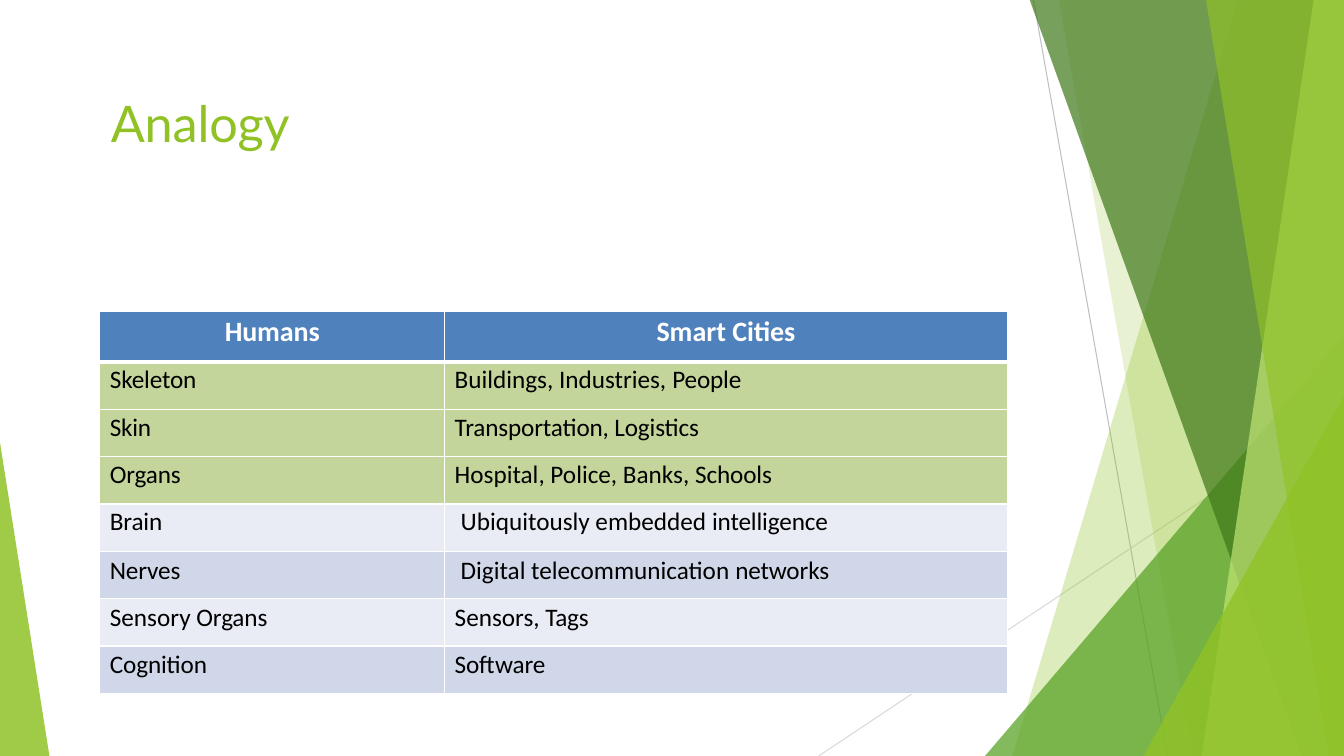
"""Build the Analogy slide: humans and smart cities side by side."""
from dataclasses import dataclass

from lxml.etree import SubElement
from pptx import Presentation
from pptx.dml.color import RGBColor
from pptx.enum.shapes import MSO_CONNECTOR, MSO_SHAPE
from pptx.enum.text import MSO_ANCHOR, PP_ALIGN
from pptx.oxml import parse_xml
from pptx.oxml.ns import nsdecls, qn
from pptx.util import Pt

SCALE = 9144
WIDE, HIGH = 1333, 750
WHITE = RGBColor(0xFF, 0xFF, 0xFF)
BLACK = RGBColor(0x00, 0x00, 0x00)
LIME = RGBColor(0x90, 0xC2, 0x26)
LEAF = RGBColor(0x54, 0xA0, 0x21)
PINE = RGBColor(0x3F, 0x78, 0x19)
PALE = RGBColor(0xC0, 0xE4, 0x74)
GREY = RGBColor(0xBF, 0xBF, 0xBF)
SILVER = RGBColor(0xD9, 0xD9, 0xD9)
BLUE = RGBColor(0x4F, 0x81, 0xBC)
OLIVE = RGBColor(0xC3, 0xD5, 0x9B)
MIST = RGBColor(0xE9, 0xEC, 0xF4)
HAZE = RGBColor(0xD0, 0xD7, 0xE8)


@dataclass
class Ray:
    """A thin line between two points."""
    start: tuple[int, int]
    end: tuple[int, int]
    color: RGBColor


@dataclass
class Band:
    """A slanted band that reaches the right edge."""
    top: int
    foot: int
    color: RGBColor
    alpha: int


@dataclass
class Wedge:
    """A triangle that stands on the bottom edge."""
    left: int
    top: int
    width: int
    tip: int
    color: RGBColor
    alpha: int


@dataclass
class Words:
    """The runs of one cell, with the spacing of the last run."""
    runs: list[str]
    space: int = -10
    indent: int = 10


@dataclass
class Row:
    """One table row."""
    human: Words
    city: Words
    color: RGBColor
    inset: int = 3


RAYS = [Ray((1025, 0), (1158, HIGH), GREY), Ray((WIDE, 403), (812, HIGH), SILVER)]
DECOR = [
    Band(1228, 1004, LIME, 30),
    Band(1050, 1183, LIME, 20),
    Wedge(977, 333, 356, 1, LEAF, 72),
    Band(1021, 1291, PINE, 70),
    Band(1303, 1192, PALE, 70),
    Band(1196, 1318, LIME, 65),
    Wedge(1134, 393, 199, 1, LIME, 80),
    Wedge(0, 439, 49, 0, LIME, 85),
]
ROWS = [
    Row(Words(["Humans"], indent=0), Words(["Smart ", "Cities"], indent=0), BLUE),
    Row(Words(["Skeleton"]), Words(["Buildings, Industries, ", "People"]), OLIVE),
    Row(Words(["Skin"], -20), Words(["Transportation, Logistics"]), OLIVE),
    Row(Words(["Organs"]), Words(["Hospital, Police, Banks, ", "Schools"]), OLIVE),
    Row(Words(["Brain"]), Words(["Ubiquitously embedded ", "intelligence"], indent=16), MIST),
    Row(Words(["Nerves"]), Words(["Digital telecommunication ", "networks"], indent=16), HAZE, 4),
    Row(Words(["Sensory ", "Organs"]), Words(["Sensors, ", "Tags"], -20), MIST, 4),
    Row(Words(["Cognition"]), Words(["Software"]), HAZE, 4),
]


def px(size: int) -> int:
    """Turn px into EMU."""
    return size * SCALE


def paint(shape, color: RGBColor, alpha: int) -> None:
    """Give a shape a clear fill with no line or shadow."""
    shape.shadow.inherit = False
    shape.line.fill.background()
    shape.fill.solid()
    shape.fill.fore_color.rgb = color
    tint = shape.fill._xPr.find(qn("a:solidFill"))[0]
    SubElement(tint, qn("a:alpha")).set("val", str(alpha * 1000))


def draw_ray(slide, ray: Ray) -> None:
    """Draw one thin line."""
    line = slide.shapes.add_connector(
        MSO_CONNECTOR.STRAIGHT, *map(px, ray.start + ray.end))
    line.line.color.rgb = ray.color
    line.line.width = Pt(0.75)
    SubElement(line._element.spPr, qn("a:effectLst"))


def draw_band(slide, band: Band) -> None:
    """Draw one slanted band."""
    form = slide.shapes.build_freeform(band.top, -1, SCALE)
    form.add_line_segments([(WIDE, -1), (WIDE, HIGH), (band.foot, HIGH)])
    paint(form.convert_to_shape(), band.color, band.alpha)


def draw_wedge(slide, wedge: Wedge) -> None:
    """Draw one triangle."""
    shape = slide.shapes.add_shape(
        MSO_SHAPE.ISOSCELES_TRIANGLE, px(wedge.left), px(wedge.top),
        px(wedge.width), px(HIGH - wedge.top))
    shape.adjustments[0] = wedge.tip
    paint(shape, wedge.color, wedge.alpha)


def write(part, words: Words, face: str, size: int, color: RGBColor,
          bold: bool, before: float) -> None:
    """Write the runs into the first paragraph."""
    part.space_before = Pt(before)
    part._p.get_or_add_pPr().set("marL", str(px(words.indent)))
    for text in words.runs:
        run = part.add_run()
        run.text = text
        font = run.font
        font.name, font.size, font.bold = face, Pt(size), bold
        font.color.rgb = color
    run._r.get_or_add_rPr().set("spc", str(words.space))


def draw_title(slide) -> None:
    """Draw the title."""
    frame = slide.shapes.add_textbox(px(109), px(89), px(720), px(50)).text_frame
    frame.word_wrap = True
    frame.margin_left = frame.margin_right = frame.margin_bottom = 0
    frame.margin_top = px(2)
    write(frame.paragraphs[0], Words(["Analogy"], indent=1), "Lato", 36, LIME, False, 1.1)


def edge(cell, row: int) -> None:
    """Draw the white borders of a cell."""
    thick = {"T": 3 if row == 1 else 1, "B": 3 if row == 0 else 1}
    for spot, side in enumerate("LRTB"):
        line = parse_xml(
            f'<a:ln{side} {nsdecls("a")} w="{Pt(thick.get(side, 1))}"><a:solidFill>'
            f'<a:srgbClr val="{WHITE}"/></a:solidFill></a:ln{side}>')
        cell._tc.get_or_add_tcPr().insert(spot, line)


def draw_table(slide) -> None:
    """Draw the table of humans and smart cities."""
    grid = slide.shapes.add_table(len(ROWS), 2, px(99), px(309), px(900), px(379)).table
    grid.first_row = grid.horz_banding = False
    grid.columns[0].width, grid.columns[1].width = px(342), px(558)
    for at, row in enumerate(ROWS):
        head = at == 0
        grid.rows[at].height = px(50 if head else 47)
        for col, words in enumerate((row.human, row.city)):
            cell = grid.cell(at, col)
            cell.margin_left = cell.margin_right = cell.margin_bottom = 0
            cell.margin_top = px(row.inset)
            cell.vertical_anchor = MSO_ANCHOR.TOP
            cell.fill.solid()
            cell.fill.fore_color.rgb = row.color
            edge(cell, at)
            part = cell.text_frame.paragraphs[0]
            part.alignment = PP_ALIGN.CENTER if head else PP_ALIGN.LEFT
            write(part, words, "Calibri", 20 if head else 18,
                  WHITE if head else BLACK, head, 2.4 if head else 2.5)


def main() -> None:
    """Build and save the slide."""
    deck = Presentation()
    deck.slide_width, deck.slide_height = px(WIDE), px(HIGH)
    slide = deck.slides.add_slide(deck.slide_layouts[6])
    for ray in RAYS:
        draw_ray(slide, ray)
    for item in DECOR:
        if isinstance(item, Band):
            draw_band(slide, item)
        else:
            draw_wedge(slide, item)
    draw_title(slide)
    draw_table(slide)
    deck.save("out.pptx")


if __name__ == "__main__":
    main()
